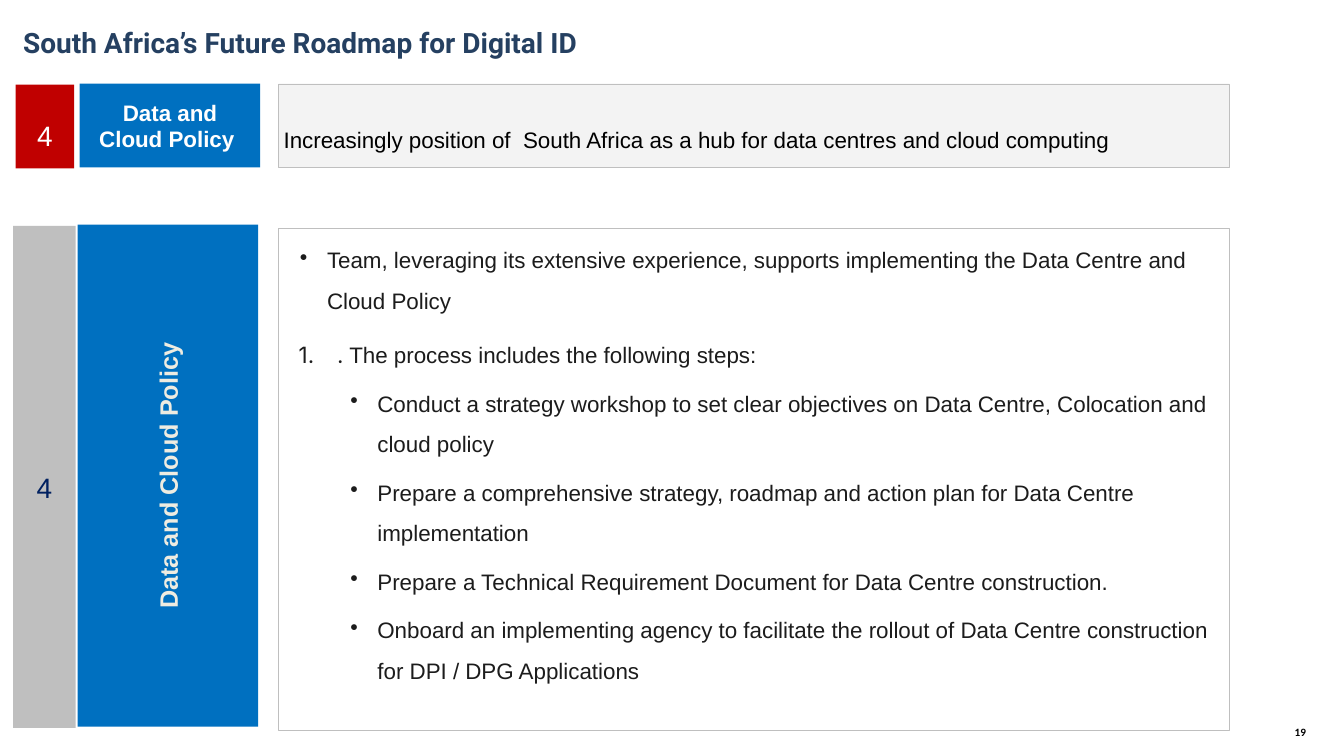
import pptx
import pptx.util
import pptx.dml.color
import pptx.enum.shapes
import pptx.enum.text
import pptx.oxml.ns
from lxml import etree

Pt = pptx.util.Pt
ALIGN = pptx.enum.text.PP_ALIGN
ANCHOR = pptx.enum.text.MSO_ANCHOR
MID, TOP = ANCHOR.MIDDLE, ANCHOR.TOP

# Content
TITLE = "South Africa’s Future Roadmap for Digital ID"
PAGE = "19"
NUMBER = "4"
LABEL = "Data and Cloud Policy "
SIDE = "Data and Cloud Policy"
GOAL = "Increasingly position of  South Africa as a hub for data centres and cloud computing"
INTRO = ("Team, leveraging its extensive experience, supports implementing "
         "the Data Centre and Cloud Policy")
LEAD = [(".", "Inter"), (" The process includes the following steps:", "Arial")]
STEPS = [
    "Conduct a strategy workshop to set clear objectives on Data Centre, Colocation and cloud policy",
    "Prepare a comprehensive strategy, roadmap and action plan for Data Centre implementation",
    "Prepare a Technical Requirement Document for Data Centre construction.",
    "Onboard an implementing agency to facilitate the rollout of Data Centre construction "
    "for DPI / DPG Applications",
]
BLUE, GREY, INK = "0070C0", "BFBFBF", "1C1C1C"

# Layout in points
WIDE, HIGH = 960, 540
BODY_X, BODY_W = 199, 679
LABEL_W = 129
HEAD_Y, HEAD_H = 59.8, 59.8
MAIN_Y, MAIN_H = 163, 358.6


def color(code):
    return pptx.dml.color.RGBColor.from_string(code)


def setup(shape, anchor, pad, top=None):
    frame = shape.text_frame
    frame.word_wrap = True
    frame.vertical_anchor = anchor
    frame.margin_left = frame.margin_right = frame.margin_bottom = Pt(pad)
    frame.margin_top = Pt(pad if top is None else top)


def block(box, fill=None, line=None, anchor=MID, pad=7.2, top=None):
    shape = slide.shapes.add_shape(
        pptx.enum.shapes.MSO_SHAPE.RECTANGLE, *[Pt(v) for v in box])
    shape.shadow.inherit = False
    if fill:
        shape.fill.solid()
        shape.fill.fore_color.rgb = color(fill)
    else:
        shape.fill.background()
    if line:
        shape.line.color.rgb = color(line)
        shape.line.width = Pt(0.25)
    else:
        shape.line.fill.background()
    setup(shape, anchor, pad, top)
    return shape


def label(box):
    shape = slide.shapes.add_textbox(*[Pt(v) for v in box])
    setup(shape, MID, 7.2, 3.6)
    return shape


def write(para, text, size, code, font="Arial", bold=False, align=ALIGN.CENTER):
    para.alignment = align
    run = para.add_run()
    run.text = text
    run.font.name = font
    run.font.size = Pt(size)
    run.font.bold = bold
    run.font.color.rgb = color(code)


def first(shape):
    return shape.text_frame.paragraphs[0]


def mark(para, tag, left, hang, **attrs):
    props = para._p.get_or_add_pPr()
    props.set("marL", str(Pt(left)))
    props.set("indent", str(Pt(-hang)))
    etree.SubElement(props, pptx.oxml.ns.qn(tag), attrs)


deck = pptx.Presentation()
deck.slide_width, deck.slide_height = Pt(WIDE), Pt(HIGH)
slide = deck.slides.add_slide(deck.slide_layouts[6])

# Title and page number
write(first(label((9.4, 3, 918.7, 58.3))), TITLE, 20, "254061", "Roboto", True, ALIGN.LEFT)
write(first(label((913, 514, 31.7, 20.9))), PAGE, 8, "000000", "Calibri", True)

# Header row
name = block((56.9, HEAD_Y, LABEL_W, HEAD_H), BLUE)
write(first(name), LABEL, 16, "FFFFFF", bold=True)

goal = block((BODY_X, HEAD_Y, BODY_W, HEAD_H), "F3F3F3", GREY, pad=3.6, top=21)
first(goal).line_spacing = 1.15
write(first(goal), GOAL, 16, "000000", align=ALIGN.LEFT)

badge = block((11.2, 60.5, 41.8, HEAD_H), "C00000", anchor=TOP, top=24)
write(first(badge), NUMBER, 20, "FFFFFF")

# Side bars
side = block((55.4, 160.4, LABEL_W, MAIN_H), BLUE)
side.element.txBody.bodyPr.set("vert", "vert270")
write(first(side), SIDE, 18, "EEECE1", bold=True)

bar = block((9.4, 161.3, 44.6, MAIN_H), GREY, top=22)
write(first(bar), NUMBER, 20, "002060")

# Main list
main = block((BODY_X, MAIN_Y, BODY_W, MAIN_H), line=GREY, anchor=TOP, pad=3.6)
DOT = ("a:buChar", {"char": "•"})
COUNT = ("a:buAutoNum", {"type": "arabicPeriod"})
rows = [([(INTRO, "Arial")], DOT, 31, 19.4, 10, 0),
        (LEAD, COUNT, 38.2, 27.4, 6, 0)]
rows += [([(step, "Arial")], DOT, 67, 19.4, 6, 1) for step in STEPS]

for i, (runs, (tag, attrs), left, hang, after, level) in enumerate(rows):
    para = main.text_frame.add_paragraph() if i else first(main)
    mark(para, tag, left, hang, **attrs)
    para.level = level
    para.line_spacing = 1.5
    para.space_after = Pt(after)
    for text, font in runs:
        write(para, text, 16, INK, font, align=ALIGN.LEFT)

deck.save("out.pptx")
